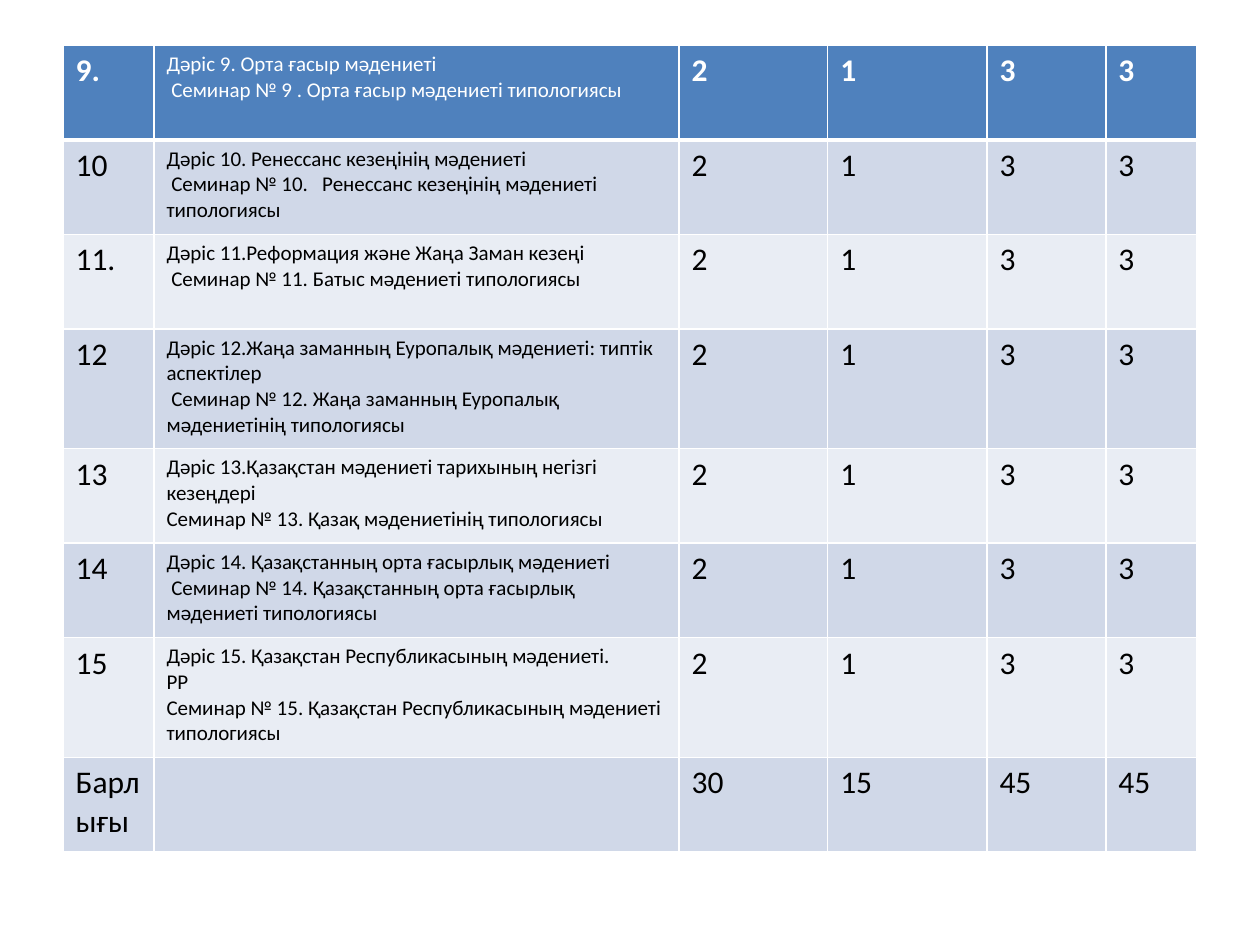
from lxml.etree import SubElement
from pptx import Presentation
from pptx.dml.color import RGBColor
from pptx.oxml.ns import qn
from pptx.util import Pt

WHITE, BLACK = "FFFFFF", "000000"
HEADER, DARK_BAND, LIGHT_BAND = "4F81BD", "D0D8E8", "E9EDF4"
COLUMN_WIDTHS = [52, 300, 85, 91, 68, 52]
ROW_HEIGHTS = [54, 54, 54, 68.4, 54, 54, 68.4, 54]
HOURS = ["2", "1", "3", "3"]
TOTALS = ["30", "15", "45", "45"]
TOPICS = [
    ("9.", ["Дәріс 9. Орта ғасыр мәдениеті",
            " Семинар № 9 . Орта ғасыр мәдениеті типологиясы"]),
    ("10", ["Дәріс 10. Ренессанс кезеңінің мәдениеті",
            " Семинар № 10.   Ренессанс кезеңінің мәдениеті типологиясы"]),
    ("11.", ["Дәріс 11.Реформация және Жаңа Заман кезеңі",
             " Семинар № 11. Батыс мәдениеті типологиясы"]),
    ("12", ["Дәріс 12.Жаңа заманның Еуропалық мәдениеті: типтік аспектілер",
            " Семинар № 12. Жаңа заманның Еуропалық мәдениетінің типологиясы"]),
    ("13", ["Дәріс 13.Қазақстан мәдениеті тарихының негізгі кезеңдері",
            "Семинар № 13. Қазақ мәдениетінің типологиясы"]),
    ("14", ["Дәріс 14. Қазақстанның орта ғасырлық мәдениеті",
            " Семинар № 14. Қазақстанның орта ғасырлық мәдениеті типологиясы"]),
    ("15", ["Дәріс 15. Қазақстан Республикасының мәдениеті.", "РР",
            "Семинар № 15. Қазақстан Республикасының мәдениеті типологиясы"]),
]


def color(value):
    """Turn a hex string into a colour."""
    return RGBColor.from_string(value)


def set_borders(cell, widths):
    """Draw white cell borders with the given widths in points."""
    properties = cell._tc.get_or_add_tcPr()
    for side, width in widths.items():
        line = SubElement(properties, qn(f"a:{side}"), w=str(Pt(width)))
        fill = SubElement(line, qn("a:solidFill"))
        SubElement(fill, qn("a:srgbClr"), val=WHITE)


def write_cell(cell, lines, font_format, font_color):
    """Write one paragraph per line and format its text."""
    for index, line in enumerate(lines):
        frame = cell.text_frame
        para = frame.add_paragraph() if index else frame.paragraphs[0]
        span = para.add_run()
        span.text = line
        for name, value in font_format.items():
            setattr(span.font, name, value)
        span.font.color.rgb = color(font_color)


def fill_row(table, row, cells):
    """Fill, border and write one row of the table."""
    is_header = row == 0
    band = HEADER if is_header else DARK_BAND if row % 2 else LIGHT_BAND
    borders = {"lnL": 1, "lnR": 1, "lnT": 3 if row == 1 else 1,
               "lnB": 3 if is_header else 1}
    for column, lines in enumerate(cells):
        cell = table.cell(row, column)
        set_borders(cell, borders)
        cell.fill.solid()
        cell.fill.fore_color.rgb = color(band)
        is_topic = column == 1
        font_format = {"name": "Calibri", "size": Pt(12 if is_topic else 18),
                       "bold": is_header and not is_topic}
        write_cell(cell, lines, font_format, WHITE if is_header else BLACK)


def add_schedule(page):
    """Add the table of lectures, seminars and hours."""
    rows = [[[number], topic, *([hour] for hour in HOURS)]
            for number, topic in TOPICS]
    rows.append([["Барлығы"], [], *([total] for total in TOTALS)])
    table = page.shapes.add_table(
        len(rows), len(COLUMN_WIDTHS), Pt(36), Pt(26),
        Pt(sum(COLUMN_WIDTHS)), Pt(sum(ROW_HEIGHTS))).table
    for column, width in zip(table.columns, COLUMN_WIDTHS):
        column.width = Pt(width)
    for row, height in zip(table.rows, ROW_HEIGHTS):
        row.height = Pt(height)
    for index, cells in enumerate(rows):
        fill_row(table, index, cells)


def main():
    """Build and save the deck."""
    deck = Presentation()
    deck.slide_width, deck.slide_height = Pt(720), Pt(540)
    page = deck.slides.add_slide(deck.slide_layouts[6])
    add_schedule(page)
    deck.save("out.pptx")


if __name__ == "__main__":
    main()
